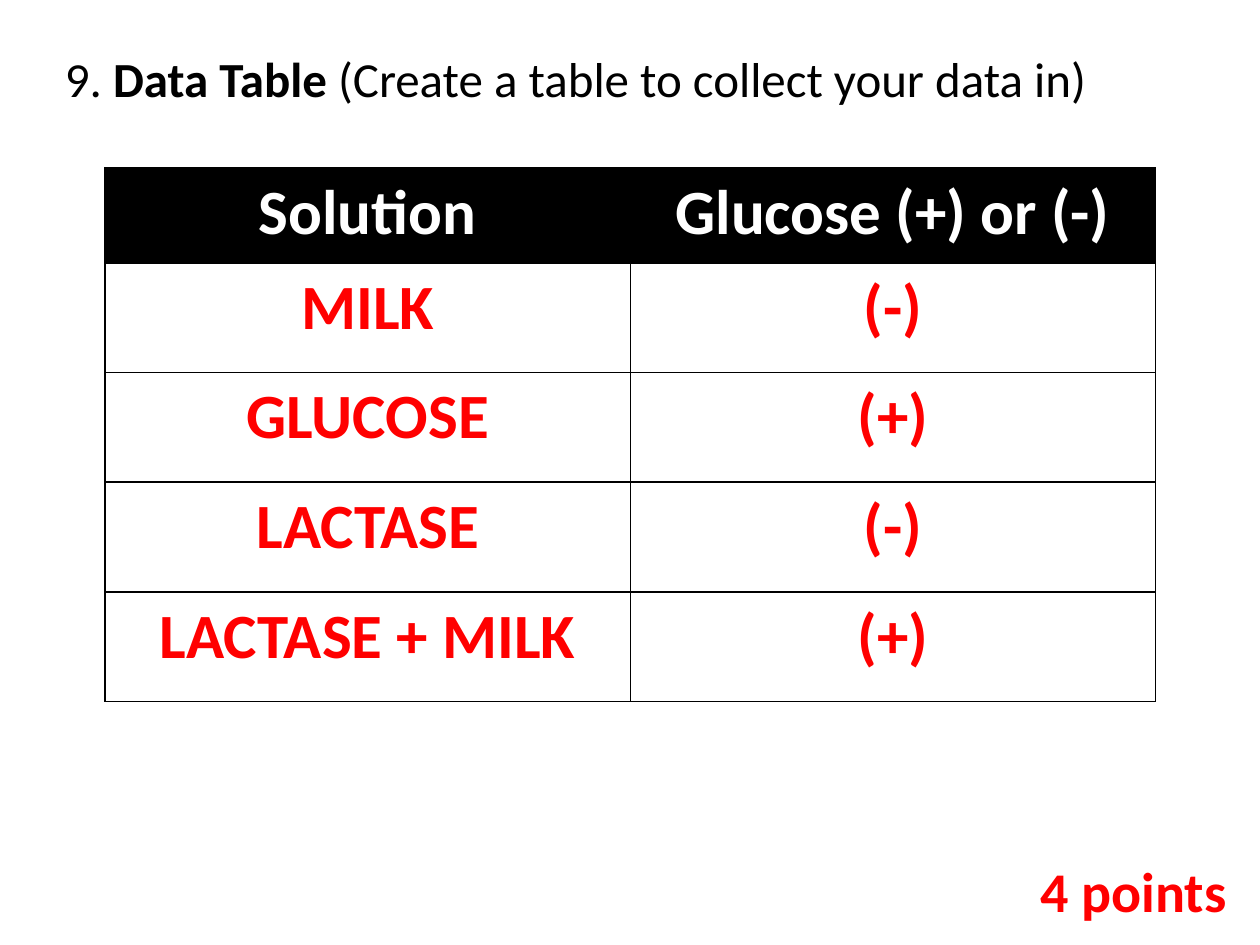
import lxml.etree
import pptx
import pptx.dml.color
import pptx.enum.text
import pptx.oxml.ns
import pptx.util
from pptx.util import Cm

BLACK, WHITE, RED = "000000", "FFFFFF", "FF0000"
ALIGN = pptx.enum.text.PP_ALIGN


def color(hex_string):
    return pptx.dml.color.RGBColor.from_string(hex_string)


def style(paragraph, size, font_color, alignment):
    paragraph.alignment = alignment
    paragraph.font.name = "Calibri"
    paragraph.font.size = pptx.util.Pt(size)
    paragraph.font.color.rgb = color(font_color)


presentation = pptx.Presentation()
presentation.slide_width = Cm(25.4)
presentation.slide_height = Cm(19.05)
slide = presentation.slides.add_slide(presentation.slide_layouts[6])

# Heading
heading = slide.shapes.add_textbox(Cm(1.06), Cm(0.85), Cm(23.28), Cm(2.23))
heading.text_frame.word_wrap = True
paragraph = heading.text_frame.paragraphs[0]
style(paragraph, 28, BLACK, ALIGN.LEFT)
for text, bold in [
    ("9. ", False),
    ("Data Table", True),
    (" (Create a table to collect your data in)", False),
]:
    run = paragraph.add_run()
    run.text = text
    run.font.bold = bold

# Points
points = slide.shapes.add_textbox(Cm(19.26), Cm(17.15), Cm(5.72), Cm(1.62))
points.text_frame.word_wrap = True
paragraph = points.text_frame.paragraphs[0]
paragraph.text = "4 points"
style(paragraph, 32, RED, ALIGN.RIGHT)
paragraph.font.bold = True

# Results table
results = [
    ("Solution", "Glucose (+) or (-)"),
    ("MILK", "(-)"),
    ("GLUCOSE", "(+)"),
    ("LACTASE", "(-)"),
    ("LACTASE + MILK", "(+)"),
]
table = slide.shapes.add_table(
    len(results), 2, Cm(2.12), Cm(3.39), Cm(21.17), Cm(10.75)
).table
for row_index, texts in enumerate(results):
    is_header = row_index == 0
    table.rows[row_index].height = Cm(1.91 if is_header else 2.21)
    for column_index, text in enumerate(texts):
        cell = table.cell(row_index, column_index)
        paragraph = cell.text_frame.paragraphs[0]
        paragraph.text = text
        style(paragraph, 36, WHITE if is_header else RED, ALIGN.CENTER)
        paragraph.font.bold = True
        if is_header:
            cell.fill.solid()
            cell.fill.fore_color.rgb = color(BLACK)
        else:
            cell.fill.background()

        # Cell borders come before the fill in the cell properties
        properties = cell._tc.get_or_add_tcPr()
        for position, side in enumerate(("a:lnL", "a:lnR", "a:lnT", "a:lnB")):
            border = lxml.etree.Element(
                pptx.oxml.ns.qn(side), w=str(int(pptx.util.Pt(1)))
            )
            fill = lxml.etree.SubElement(border, pptx.oxml.ns.qn("a:solidFill"))
            lxml.etree.SubElement(fill, pptx.oxml.ns.qn("a:srgbClr"), val=BLACK)
            properties.insert(position, border)

presentation.save("out.pptx")
